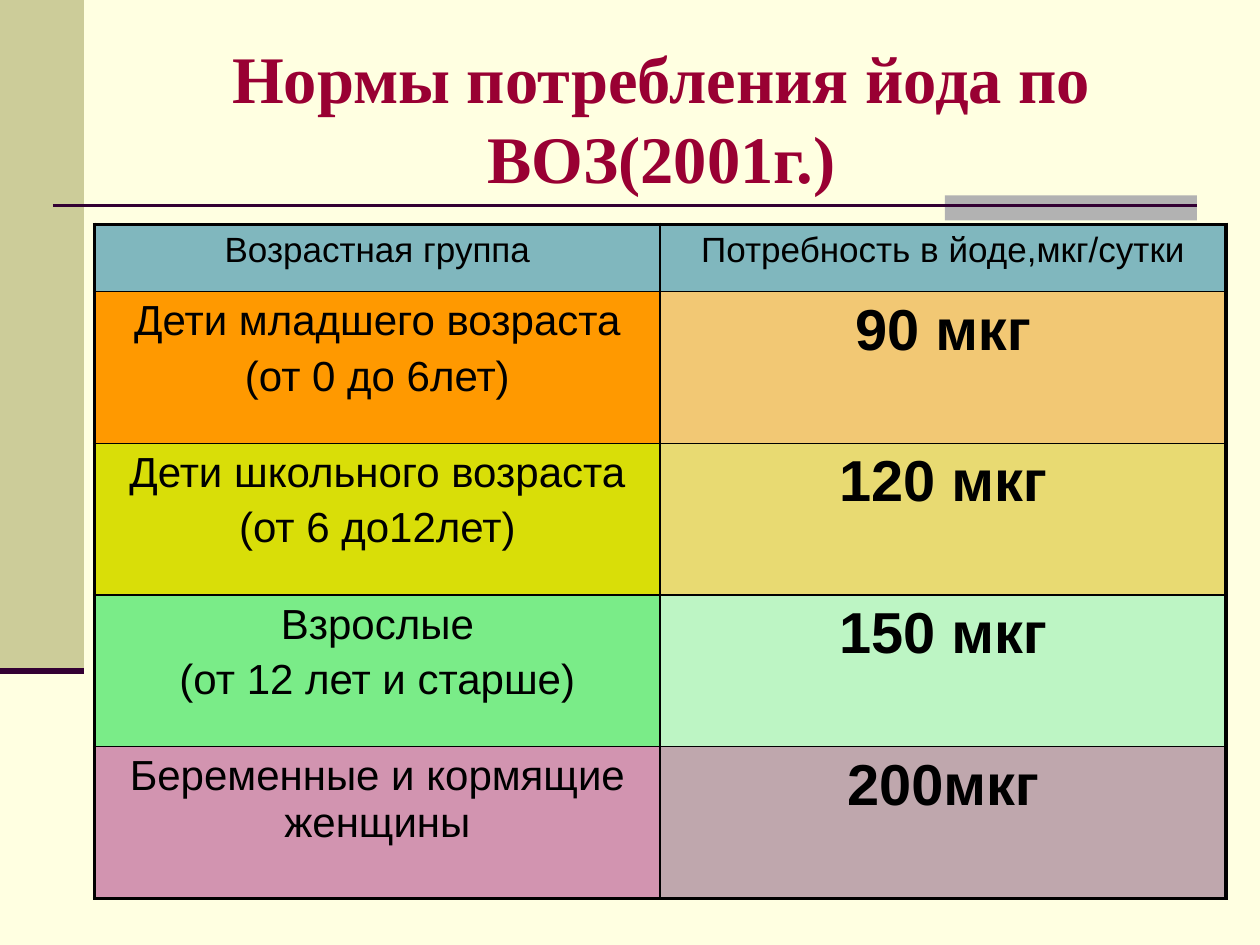
from pptx import Presentation
from pptx.dml.color import RGBColor
from pptx.enum.shapes import MSO_CONNECTOR, MSO_SHAPE
from pptx.enum.text import MSO_ANCHOR, PP_ALIGN
from pptx.oxml.ns import qn
from pptx.util import Inches, Pt
from lxml import etree

RECTANGLE = MSO_SHAPE.RECTANGLE
STRAIGHT = MSO_CONNECTOR.STRAIGHT
CENTER = PP_ALIGN.CENTER
MIDDLE = MSO_ANCHOR.MIDDLE

WIDTH, HEIGHT = 10, 7.5
COLORS = {
    "page": "FFFFE1", "sidebar": "CCCC99", "accent": "B2B2B2",
    "rule": "330033", "title": "990033", "text": "000000",
    "border": "000000", "header": "80B7BE",
}
HEADER = ("Возрастная группа", "Потребность в йоде,мкг/сутки")
# Age group lines, its fill, daily need, its fill
NORMS = [
    (["Дети младшего возраста", "(от 0 до 6лет)"], "FF9900", "90 мкг", "F2C874"),
    (["Дети школьного возраста", "(от 6 до12лет)"], "D9DE08", "120 мкг", "E8DA72"),
    (["Взрослые", "(от 12 лет и старше)"], "7AEC88", "150 мкг", "BDF5C4"),
    (["Беременные и кормящие женщины"], "D294B0", "200мкг", "BFA7AD"),
]
OUTER_BORDER, INNER_BORDER = 2.21, 0.96
HEADER_SHARE = 0.1  # of the table's height


def rgb(name):
    return RGBColor.from_string(COLORS.get(name, name))


def inches(*lengths):
    return [Inches(length) for length in lengths]


def add_block(page, box, color):
    block = page.shapes.add_shape(RECTANGLE, *inches(*box))
    block.shadow.inherit = False
    block.fill.solid()
    block.fill.fore_color.rgb = rgb(color)
    block.line.fill.background()


def add_rule(page, left, right, top, weight):
    rule = page.shapes.add_connector(STRAIGHT, *inches(left, top, right, top))
    rule.line.color.rgb = rgb("rule")
    rule.line.width = Pt(weight)
    etree.SubElement(rule._element.spPr, qn("a:effectLst"))


def write_line(para, text, size, color="text", font="Arial", bold=False):
    para.alignment = CENTER
    span = para.add_run()
    span.text = text
    span.font.name = font
    span.font.size = Pt(size)
    span.font.bold = bold
    span.font.color.rgb = rgb(color)


def add_sidebar(page, box):
    left, top, width, height = box
    add_block(page, box, "sidebar")
    add_rule(page, left, left + width, top + height, 3.5)


def add_title_rule(page, box):
    """Accent bar at the right end of a thin rule that crosses it."""
    left, top, width, height = box
    bar_width = WIDTH / 5
    add_block(page, (left + width - bar_width, top, bar_width, height), "accent")
    add_rule(page, left, left + width, top + height * 0.4, 1.5)


def add_title(page, box, text):
    frame = page.shapes.add_textbox(*inches(*box)).text_frame
    frame.word_wrap = True
    frame.vertical_anchor = MIDDLE
    write_line(frame.paragraphs[0], text, 38, "title", "Times New Roman", True)


def set_borders(cell, weights):
    """Draw left, right, top and bottom borders; they precede the cell's fill."""
    properties = cell._tc.get_or_add_tcPr()
    for position, (side, weight) in enumerate(zip("LRTB", weights)):
        line = etree.Element(qn(f"a:ln{side}"), w=str(Pt(weight)))
        fill = etree.SubElement(line, qn("a:solidFill"))
        etree.SubElement(fill, qn("a:srgbClr"), val=COLORS["border"])
        properties.insert(position, line)


def fill_cell(cell, lines, size, color, bold=False):
    cell.fill.solid()
    cell.fill.fore_color.rgb = rgb(color)
    frame = cell.text_frame
    for index, text in enumerate(lines):
        para = frame.add_paragraph() if index else frame.paragraphs[0]
        para.space_before = Pt(size * 0.2)
        write_line(para, text, size, bold=bold)


def add_norms_table(page, box):
    row_count, column_count = len(NORMS) + 1, len(HEADER)
    table = page.shapes.add_table(row_count, column_count, *inches(*box)).table
    table.first_row = table.horz_banding = False
    width, height = box[2:]
    for column in table.columns:
        column.width = Inches(width / column_count)
    for index, row in enumerate(table.rows):
        share = (1 - HEADER_SHARE) / len(NORMS) if index else HEADER_SHARE
        row.height = Inches(height * share)

    for column, heading in enumerate(HEADER):
        fill_cell(table.cell(0, column), [heading], 20, "header")
    for row, (group, group_color, need, need_color) in enumerate(NORMS, 1):
        fill_cell(table.cell(row, 0), group, 24, group_color)
        fill_cell(table.cell(row, 1), [need], 33, need_color, bold=True)

    for row in range(row_count):
        for column in range(column_count):
            on_edge = (column == 0, column == column_count - 1,
                       row == 0, row == row_count - 1)
            set_borders(table.cell(row, column),
                        [OUTER_BORDER if edge else INNER_BORDER for edge in on_edge])


def main():
    deck = Presentation()
    deck.slide_width, deck.slide_height = inches(WIDTH, HEIGHT)
    page = deck.slides.add_slide(deck.slide_layouts[6])
    page.background.fill.solid()
    page.background.fill.fore_color.rgb = rgb("page")

    add_sidebar(page, (0, 0, WIDTH / 15, HEIGHT * 0.71))
    add_title_rule(page, (WIDTH * 0.042, 1.55, WIDTH * 0.908, 0.2))
    add_title(page, (WIDTH * 0.1, HEIGHT * 0.04, WIDTH * 0.85, HEIGHT / 6),
              "Нормы потребления йода по ВОЗ(2001г.)")
    add_norms_table(page, (WIDTH * 0.075, 1.78, WIDTH * 0.898, 5.35))
    deck.save("out.pptx")


if __name__ == "__main__":
    main()
